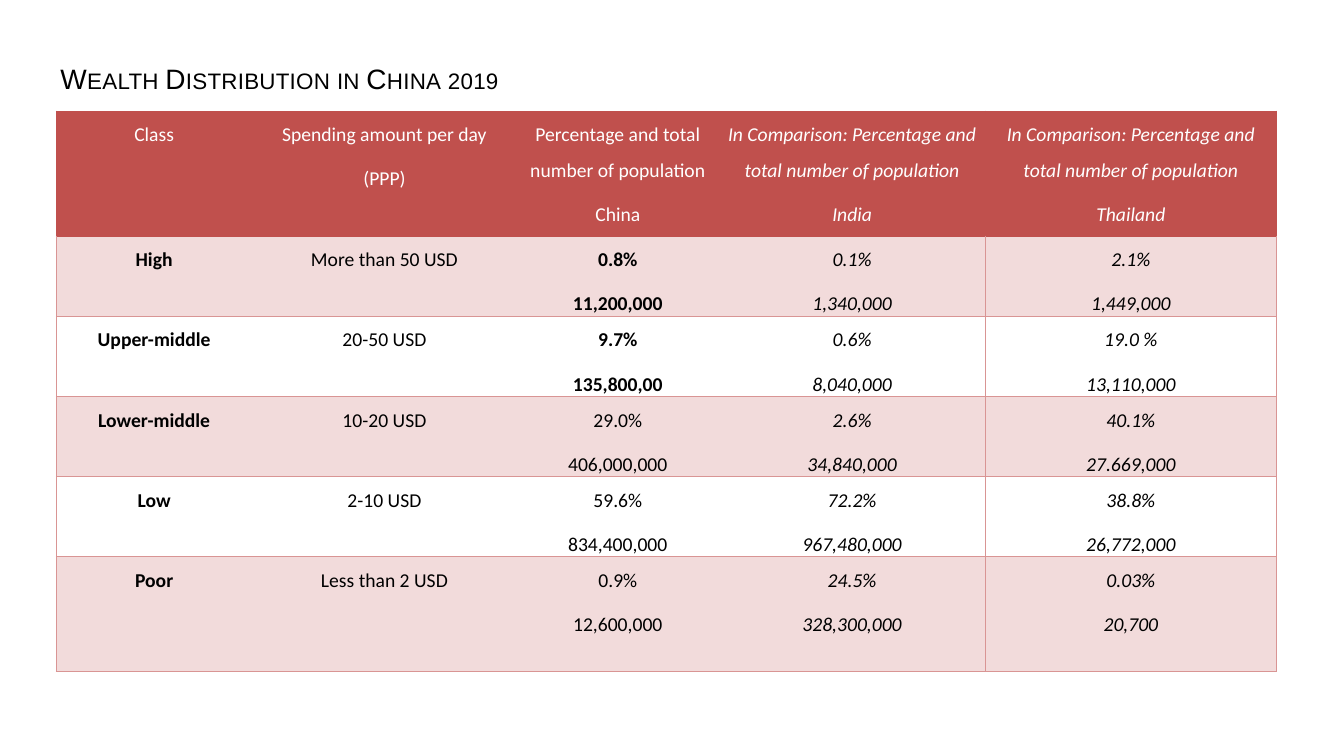
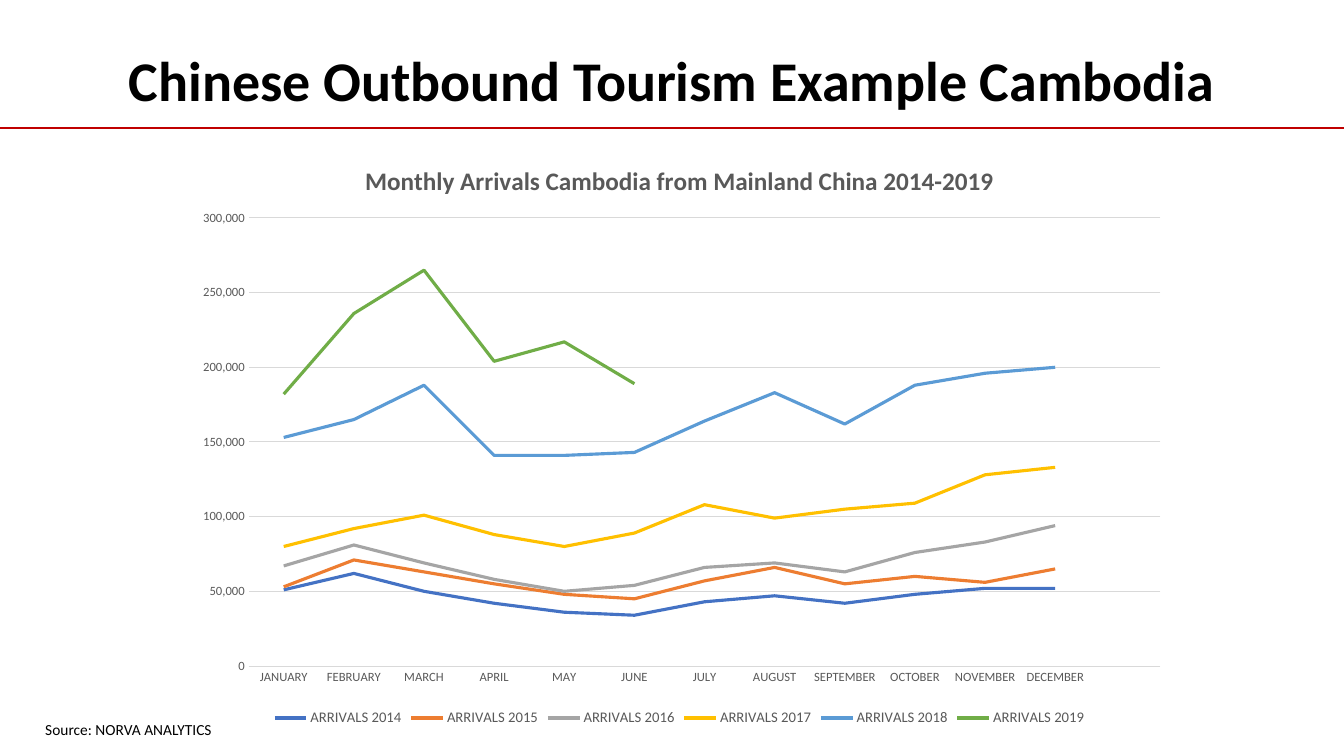
from lxml import etree
from pptx import Presentation
from pptx.chart.data import CategoryChartData as Data
from pptx.dml.color import RGBColor as Rgb
from pptx.enum.chart import XL_CHART_TYPE as Kind, XL_LEGEND_POSITION as Spot
from pptx.enum.chart import XL_TICK_MARK as Tick
from pptx.enum.shapes import MSO_CONNECTOR as Link
from pptx.enum.text import MSO_ANCHOR as Anchor, MSO_AUTO_SIZE as Fit, PP_ALIGN as Align
from pptx.oxml.ns import qn
from pptx.util import Cm, Pt

RED, ROSE, PINK, RULE = "C0504D", "D99594", "F2DBDB", "C00000"
BLACK, WHITE, GRAY, GRID = "000000", "FFFFFF", "595959", "D9D9D9"
PLAIN = "{2D5ABB26-0587-4C30-8999-92F81FD0307C}"  # table style without fills or lines
WIDE, HIGH = 33.87, 19.05

HEAD = [
    ["Class"],
    ["Spending amount per day", "(PPP)"],
    ["Percentage and total number of population", "China"],
    ["In Comparison: Percentage and total number of population", "India"],
    ["In Comparison: Percentage and total number of population", "Thailand"],
]
BODY = [
    [["High"], ["More than 50 USD"], ["0.8%", "11,200,000"],
     ["0.1%", "1,340,000"], ["2.1%", "1,449,000"]],
    [["Upper-middle"], ["20-50 USD"], ["9.7%", "135,800,00"],
     ["0.6%", "8,040,000"], ["19.0 %", "13,110,000"]],
    [["Lower-middle"], ["10-20 USD"], ["29.0%", "406,000,000"],
     ["2.6%", "34,840,000"], ["40.1%", "27.669,000"]],
    [["Low"], ["2-10 USD"], ["59.6%", "834,400,000"],
     ["72.2%", "967,480,000"], ["38.8%", "26,772,000"]],
    [["Poor"], ["Less than 2 USD"], ["0.9%", "12,600,000"],
     ["24.5%", "328,300,000"], ["0.03%", "20,700"]],
]
COLS = [4.93, 6.68, 5.08, 6.73, 7.32]
ROWS = [3.15, 2.02, 2.02, 2.02, 2.02, 2.9]

# The empty last category leaves a free place at the right
MONTHS = ["JANUARY", "FEBRUARY", "MARCH", "APRIL", "MAY", "JUNE", "JULY", "AUGUST",
          "SEPTEMBER", "OCTOBER", "NOVEMBER", "DECEMBER", ""]
# Arrivals in thousands
YEARS = {
    2014: ("4472C4", [51, 62, 50, 42, 36, 34, 43, 47, 42, 48, 52, 52]),
    2015: ("ED7D31", [53, 71, 63, 55, 48, 45, 57, 66, 55, 60, 56, 65]),
    2016: ("A5A5A5", [67, 81, 69, 58, 50, 54, 66, 69, 63, 76, 83, 94]),
    2017: ("FFC000", [80, 92, 101, 88, 80, 89, 108, 99, 105, 109, 128, 133]),
    2018: ("5B9BD5", [153, 165, 188, 141, 141, 143, 164, 183, 162, 188, 196, 200]),
    2019: ("70AD47", [182, 236, 265, 204, 217, 189]),
}


def rgb(code):
    return Rgb.from_string(code)


def put(item, **vals):
    for name, val in vals.items():
        setattr(item, name, val)


def ink(font, size, code=BLACK, **vals):
    put(font, **{"name": "Calibri", "size": Pt(size), "bold": False, **vals})
    font.color.rgb = rgb(code)


def draw(line, code, width):
    line.color.rgb = rgb(code)
    line.width = Pt(width)


def edge(cell, side, code):
    """Draw a border on side L, R, T or B; call in that order, before the fill."""
    ln = etree.SubElement(cell._tc.get_or_add_tcPr(), qn("a:ln" + side), w=str(Pt(1)))
    fill = etree.SubElement(ln, qn("a:solidFill"))
    etree.SubElement(fill, qn("a:srgbClr"), val=code)


def frame(chart, **parts):
    """Fix the inner plot area, in fractions of the chart."""
    plot = chart._chartSpace.find(".//" + qn("c:plotArea"))
    for old in plot.findall(qn("c:layout")):
        plot.remove(old)
    lay = etree.Element(qn("c:layout"))
    plot.insert(0, lay)
    man = etree.SubElement(lay, qn("c:manualLayout"))
    vals = {"layoutTarget": "inner", "xMode": "edge", "yMode": "edge", **parts}
    for tag, val in vals.items():
        etree.SubElement(man, qn("c:" + tag), val=str(val))


class Deck:
    """Holds the presentation, its style and the current slide."""

    loose = {"line_spacing": 1.5, "space_before": Pt(6)}

    def __init__(self):
        self.prs = Presentation()
        put(self.prs, slide_width=Cm(WIDE), slide_height=Cm(HIGH))
        self.slide = None

    def page(self):
        self.slide = self.prs.slides.add_slide(self.prs.slide_layouts[5])

    def label(self, box, text, size, wrap, **vals):
        body = box.text_frame
        put(body, text=text, word_wrap=wrap, auto_size=Fit.NONE,
            vertical_anchor=Anchor.TOP)
        para = body.paragraphs[0]
        ink(para.runs[0].font, size, **vals)
        return para

    def title(self, text, size, area, **vals):
        box = self.slide.shapes.title
        put(box, **dict(zip(("left", "top", "width", "height"), map(Cm, area))))
        return self.label(box, text, size, False, **vals)

    def note(self, text, size, area):
        box = self.slide.shapes.add_textbox(*map(Cm, area))
        self.label(box, text, size, True)

    def rule(self, y):
        line = self.slide.shapes.add_connector(Link.STRAIGHT, 0, Cm(y), Cm(WIDE), Cm(y))
        draw(line.line, RULE, 1.5)
        etree.SubElement(line._element.spPr, qn("a:effectLst"))

    def cell(self, cell, lines, code, **vals):
        put(cell, margin_left=Cm(0.18), margin_right=Cm(0.18), margin_top=0,
            margin_bottom=0)
        cell.text = "\n".join(lines)
        for para in cell.text_frame.paragraphs:
            put(para, alignment=Align.CENTER, **self.loose)
            ink(para.runs[0].font, 14, code, **vals)

    def table(self, x, y):
        size = (len(ROWS), len(COLS))
        shape = self.slide.shapes.add_table(
            *size, Cm(x), Cm(y), Cm(sum(COLS)), Cm(sum(ROWS)))
        table = shape.table
        put(table, first_row=False, horz_banding=False)
        table._tbl.tblPr.find(qn("a:tableStyleId")).text = PLAIN
        for col, width in zip(table.columns, COLS):
            col.width = Cm(width)
        for row, height in zip(table.rows, ROWS):
            row.height = Cm(height)
        for r, line in enumerate([HEAD] + BODY):
            tone = ROSE if r else RED
            for c, words in enumerate(line):
                cell = table.cell(r, c)
                bold = r > 0 and c == 0 or r in (1, 2) and c == 2
                self.cell(cell, words, BLACK if r else WHITE, bold=bold, italic=c > 2)
                if c in (0, 4):
                    edge(cell, "L", tone)
                if c > 2:
                    edge(cell, "R", tone)
                edge(cell, "T", RED if r < 2 else ROSE)
                edge(cell, "B", tone)
                if r == 0 or r % 2:
                    cell.fill.solid()
                    cell.fill.fore_color.rgb = rgb(PINK if r else RED)
                else:
                    cell.fill.background()

    def chart(self, head, area):
        data = Data(number_format="#,##0")
        data.categories = MONTHS
        for year, (_, vals) in YEARS.items():
            rest = [None] * (len(MONTHS) - len(vals))
            data.add_series(f"ARRIVALS {year}", [val * 1000 for val in vals] + rest)
        chart = self.slide.shapes.add_chart(Kind.LINE, *map(Cm, area), data).chart
        ink(chart.font, 10)
        chart.has_title = True
        chart.chart_title.text_frame.text = head
        run = chart.chart_title.text_frame.paragraphs[0].runs[0]
        ink(run.font, 18, GRAY, bold=True)
        chart.has_legend = True
        put(chart.legend, position=Spot.BOTTOM, include_in_layout=False)
        ink(chart.legend.font, 10.5, GRAY)
        plot = chart.plots[0]
        plot.vary_by_categories = False
        for line, (code, _) in zip(plot.series, YEARS.values()):
            line.smooth = False
            draw(line.format.line, code, 2.25)
        months, count = chart.category_axis, chart.value_axis
        for axis in (months, count):
            put(axis, major_tick_mark=Tick.NONE, minor_tick_mark=Tick.NONE)
            ink(axis.tick_labels.font, 9, GRAY)
        draw(months.format.line, GRID, 0.75)
        put(count, minimum_scale=0, maximum_scale=300000, major_unit=50000,
            has_major_gridlines=True)
        put(count.tick_labels, number_format="#,##0", number_format_is_linked=False)
        count.format.line.fill.background()
        draw(count.major_gridlines.format.line, GRID, 0.75)
        frame(chart, x=0.07, y=0.13, w=0.91, h=0.76)


def main():
    deck = Deck()

    deck.page()
    para = deck.title("Wealth Distribution in China 2019", 20,
                      (1.27, 1, 12.55, 1.55), name="Arial")
    put(para, alignment=Align.JUSTIFY, **deck.loose)
    props = para.runs[0]._r.get_or_add_rPr()
    for key, val in {"cap": "small", "spc": "20"}.items():
        props.set(key, val)
    deck.table(1.42, 2.8)

    deck.page()
    para = deck.title("Chinese Outbound Tourism Example Cambodia", 40,
                      (2.84, 1.02, 28.17, 1.96), bold=True)
    para.alignment = Align.CENTER
    deck.rule(3.23)
    deck.chart("Monthly Arrivals Cambodia from Mainland China 2014-2019",
               (4.5, 3.56, 25.25, 14.86))
    deck.note("Source: NORVA ANALYTICS", 11, (0.89, 18.03, 13.23, 0.74))

    deck.prs.save("out.pptx")


if __name__ == "__main__":
    main()
